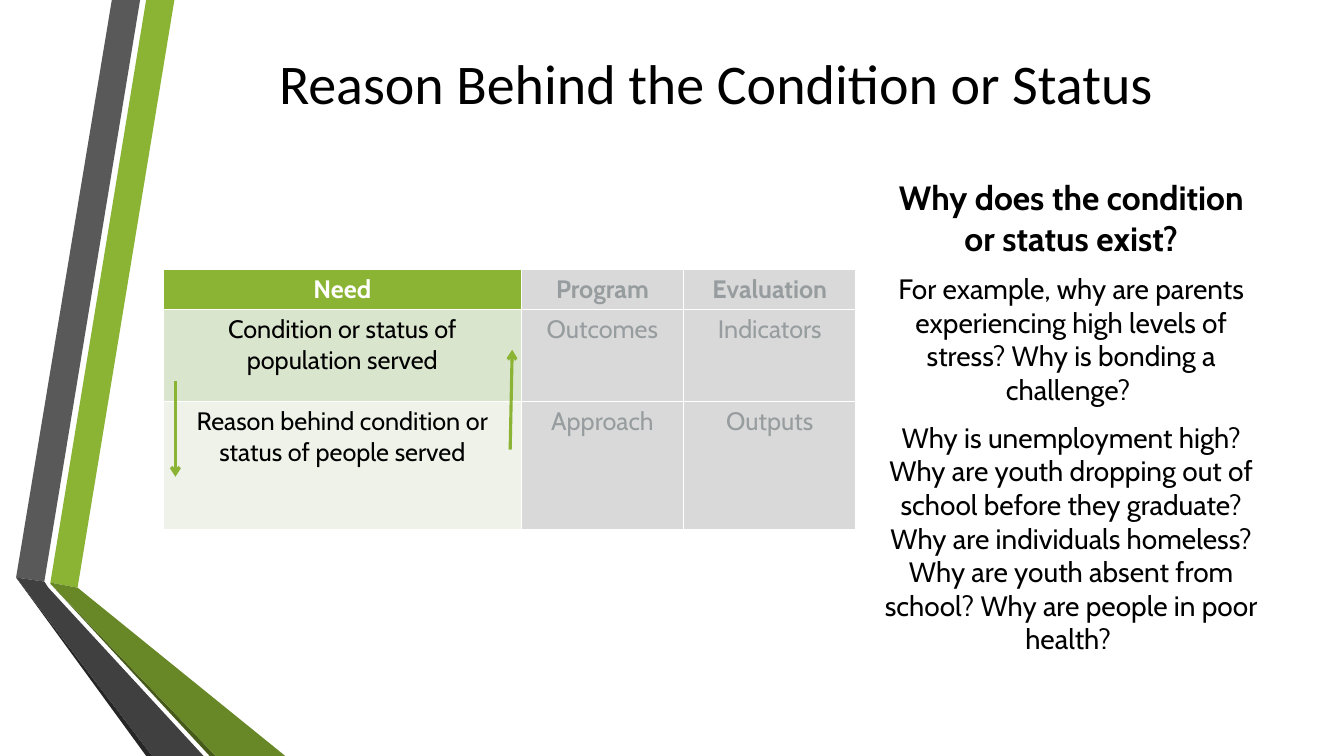
import pptx
import pptx.util
import pptx.dml.color
import pptx.enum.shapes
import pptx.enum.text
import lxml.etree
from dataclasses import dataclass


@dataclass(frozen=True)
class Theme:
    green: str = "8BB434"
    moss: str = "688727"
    olive: str = "465A1A"
    slate: str = "595959"
    coal: str = "404040"
    soot: str = "262626"
    black: str = "000000"
    white: str = "FFFFFF"
    mist: str = "D9D9D9"
    dim: str = "979D9F"
    sage: str = "DAE5CE"
    pale: str = "EEF2E8"
    head: str = "Calibri"
    body: str = "Cabin"
    title: int = 40
    lead: int = 24
    text: int = 20
    cell: int = 18


theme = Theme()
rgb = pptx.dml.color.RGBColor.from_string
center = pptx.enum.text.PP_ALIGN.CENTER
middle = pptx.enum.text.MSO_ANCHOR.MIDDLE
ns = "http://schemas.openxmlformats.org/drawingml/2006/main"
step = pptx.util.Inches(0.01)  # The grid has 1333 columns and 750 rows
wide, high = 1333, 750


def grid(*steps):
    return [step * n for n in steps]


def write(para, text, size, color, font=theme.body, bold=False):
    """Add one centred run to a paragraph."""
    para.alignment = center
    run = para.add_run()
    run.text = text
    run.font.size = pptx.util.Pt(size)
    run.font.name = font
    run.font.bold = bold
    run.font.color.rgb = rgb(color)


deck = pptx.Presentation()
deck.slide_width, deck.slide_height = grid(wide, high)
slide = deck.slides.add_slide(deck.slide_layouts[5])
shapes = slide.shapes

# Ribbon down the left side
bands = [
    (theme.green, [(50, 578), (77, 583), (173, 0), (145, 0)]),
    (theme.slate, [(139, 0), (111, 0), (16, 573), (44, 577)]),
    (theme.soot, [(16, 573), (145, high), (151, high)]),
    (theme.olive, [(50, 579), (208, high), (214, high)]),
    (theme.moss, [(50, 578), (50, 579), (214, high), (283, high), (77, 583)]),
    (theme.coal, [(202, high), (48, 583), (44, 577), (16, 573), (151, high)]),
]
for color, points in bands:
    pen = shapes.build_freeform(*points[0], scale=step)
    pen.add_line_segments(points[1:], close=True)
    band = pen.convert_to_shape()
    band.shadow.inherit = False
    band.fill.solid()
    band.fill.fore_color.rgb = rgb(color)
    band.line.fill.background()

# Title
left, right = 162, 1258
title = shapes.title
title.left, title.top, title.width, title.height = grid(left, 14, right - left, 134)
title.text_frame.vertical_anchor = middle
write(title.text_frame.paragraphs[0], "Reason Behind the Condition or Status",
      theme.title, theme.black, theme.head)

# Questions at the right
notes = [
    ("Why does the condition or status exist?", theme.lead, True),
    ("For example, why are parents experiencing high levels of stress? "
     "Why is bonding a challenge? ", theme.text, False),
    ("Why is unemployment high? Why are youth dropping out of school before "
     "they graduate? Why are individuals homeless? Why are youth absent from "
     "school? Why are people in poor health? ", theme.text, False),
]
frame = shapes.add_textbox(*grid(867, 198, right - 867, 430)).text_frame
frame.word_wrap = True
frame.vertical_anchor = middle
for i, (text, size, bold) in enumerate(notes):
    para = frame.add_paragraph() if i else frame.paragraphs[0]
    para.space_before = pptx.util.Pt(size * 0.2)
    para.space_after = pptx.util.Pt(6)
    write(para, text, size, theme.black, bold=bold)

# Table: the first column stands out, the others are dimmed
rows = [
    ["Need", "Program", "Evaluation"],
    ["Condition or status of population served", "Outcomes", "Indicators"],
    ["Reason behind condition or status of people served", "Approach", "Outputs"],
]
looks = [(theme.green, theme.white), (theme.sage, theme.black),
         (theme.pale, theme.black)]
widths, heights = [355, 161, 171], [40, 91, 127]
table = shapes.add_table(3, 3, *grid(left, 267, sum(widths), sum(heights))).table
for col, width in zip(table.columns, grid(*widths)):
    col.width = width
for row, height in zip(table.rows, grid(*heights)):
    row.height = height
for r, texts in enumerate(rows):
    for c, text in enumerate(texts):
        fill, ink = (theme.mist, theme.dim) if c else looks[r]
        cell = table.cell(r, c)
        cell.margin_left, cell.margin_right = grid(8, 8)
        cell.margin_top, cell.margin_bottom = grid(5, 5)
        write(cell.text_frame.paragraphs[0], text, theme.cell, ink, bold=r == 0)
        cell.fill.solid()
        cell.fill.fore_color.rgb = rgb(fill)
        props = cell._tc.get_or_add_tcPr()
        for i, side in enumerate(["lnL", "lnR", "lnT", "lnB"]):
            edge = lxml.etree.Element(f"{{{ns}}}{side}", w="12700")
            paint = lxml.etree.SubElement(edge, f"{{{ns}}}solidFill")
            lxml.etree.SubElement(paint, f"{{{ns}}}srgbClr", val=theme.white)
            props.insert(i, edge)

# Arrows between the two needs
for ends in [(174, 378, 174, 473), (506, 446, 508, 347)]:
    arrow = shapes.add_connector(pptx.enum.shapes.MSO_CONNECTOR.STRAIGHT, *grid(*ends))
    arrow.line.color.rgb = rgb(theme.green)
    arrow.line.width = pptx.util.Pt(2.25)
    lxml.etree.SubElement(arrow.line._get_or_add_ln(), f"{{{ns}}}tailEnd", type="arrow")
    lxml.etree.SubElement(arrow._element.spPr, f"{{{ns}}}effectLst")

deck.save("out.pptx")
